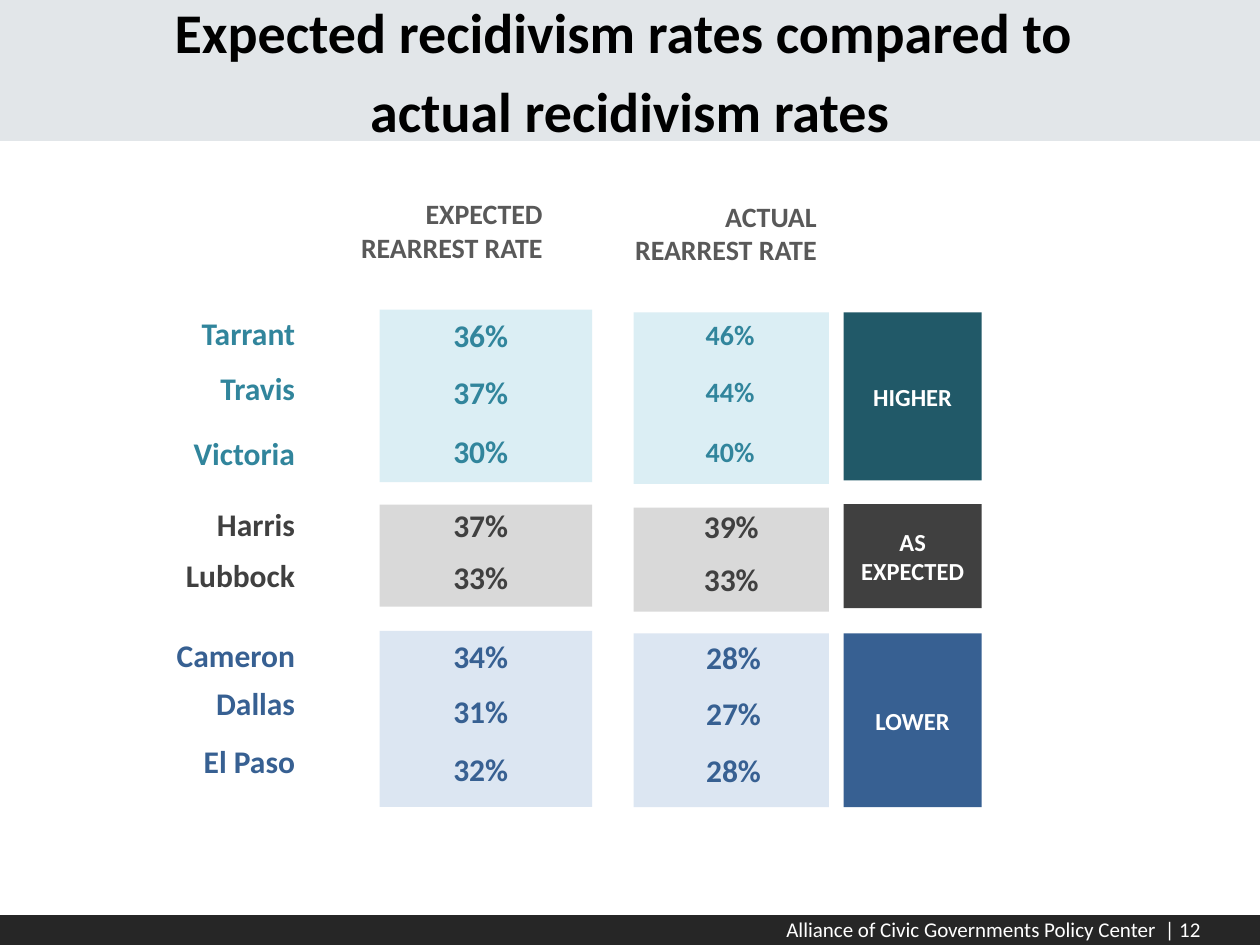
from pptx import Presentation
from pptx.dml.color import RGBColor as Rgb
from pptx.enum.shapes import MSO_SHAPE as Kind
from pptx.enum.text import MSO_ANCHOR as Anchor, PP_ALIGN as Align
from pptx.util import Pt

HEX = {
    "bar": "262626", "band": "E2E6E9", "black": "000000", "white": "FFFFFF",
    "head": "595959",
    "teal": "31859C", "teal pale": "DBEEF4", "teal deep": "215968",
    "gray": "404040", "gray pale": "D9D9D9", "gray deep": "404040",
    "blue": "376092", "blue pale": "DCE6F2", "blue deep": "376092",
}


class Deck:
    font = "Calibri"

    def __init__(self, wide, high):
        self.show = Presentation()
        self.show.slide_width, self.show.slide_height = Pt(wide), Pt(high)
        self.slide = self.show.slides.add_slide(self.show.slide_layouts[6])

    def fill_text(self, shape, lines, size, color, align, anchor, bold=True, gap=0):
        frame = shape.text_frame
        frame.word_wrap = True
        frame.vertical_anchor = anchor
        look = {"name": self.font, "size": Pt(size), "bold": bold}
        for i, line in enumerate(lines):
            para = frame.paragraphs[0] if i == 0 else frame.add_paragraph()
            para.alignment = align
            para.space_before = Pt(gap)
            run = para.add_run()
            run.text = line
            for key, value in look.items():
                setattr(run.font, key, value)
            run.font.color.rgb = Rgb.from_string(HEX[color])

    def block(self, x, y, w, h, color, lines=()):
        box = self.slide.shapes.add_shape(Kind.RECTANGLE, Pt(x), Pt(y), Pt(w), Pt(h))
        box.shadow.inherit = False
        box.fill.solid()
        box.fill.fore_color.rgb = Rgb.from_string(HEX[color])
        box.line.fill.background()
        if lines:
            self.fill_text(box, lines, 14, "white", Align.CENTER, Anchor.MIDDLE)

    def label(self, x, y, w, h, lines, size, color, align=Align.CENTER,
              anchor=Anchor.TOP, **more):
        box = self.slide.shapes.add_textbox(Pt(x), Pt(y), Pt(w), Pt(h))
        self.fill_text(box, lines, size, color, align, anchor, **more)


# Each group: hue, tag lines, (top, height) of the expected, actual and tag
# blocks, left edge and size of the actual rates, and the rows.
# Each row: county, expected, actual, then the top of each of the three.
GROUPS = [
    ("teal", ["HIGHER"], [(177, 98.5), (178.5, 98), (178.5, 96)], 364.3, 16, [
        ("Tarrant", "36%", "46%", 175.7, 177, 177.8),
        ("Travis", "37%", "44%", 207.5, 209.5, 210.2),
        ("Victoria", "30%", "40%", 244.5, 243.5, 244.8)]),
    ("gray", ["AS", "EXPECTED"], [(288.3, 58.3), (290, 59.5), (288, 59.5)], 365, 18, [
        ("Harris", "37%", "39%", 285, 285.8, 286.3),
        ("Lubbock", "33%", "33%", 313.9, 315.4, 316.2)]),
    ("blue", ["LOWER"], [(360.5, 100.7), (362, 99.2), (362, 99.2)], 366.3, 18, [
        ("Cameron", "34%", "28%", 360, 360.7, 361.3),
        ("Dallas", "31%", "27%", 387.5, 392, 393.3),
        ("El Paso", "32%", "28%", 420.6, 425, 425.6)]),
]

deck = Deck(720, 540)

# Footer
deck.block(0, 523, 720, 17, "bar")
deck.label(381.5, 521.5, 312, 19, ["Alliance of Civic Governments Policy Center  | 12"],
           12, "white", Align.RIGHT, Anchor.MIDDLE, bold=False)

# Title band
deck.block(0, 0, 720, 80.5, "band")
deck.label(0, 0, 720, 80.5,
           ["Expected recidivism rates compared to ", "actual recidivism rates"],
           32, "black", anchor=Anchor.MIDDLE, gap=6.4)

# Column heads
for x, y, word in [(160.7, 108.8, "EXPECTED"), (317.3, 110.3, "ACTUAL")]:
    deck.label(x, y, 156.5, 46, [word, "REARREST RATE"], 16, "head", Align.RIGHT)

# County groups
for hue, tag, spans, left, size, rows in GROUPS:
    tones = [hue + " pale", hue + " pale", hue + " deep"]
    places = [(217, 121.5), (362, 111.6), (482, 79)]
    for (x, w), (y, h), tone, lines in zip(places, spans, tones, [(), (), tag]):
        deck.block(x, y, w, h, tone, lines)
    for name, hope, real, top, mid, low in rows:
        deck.label(82.7, top, 93, 29, [name], 18, hue, Align.RIGHT)
        deck.label(217.2, mid, 115, 29, [hope], 18, hue)
        deck.label(left, low, 105.8, 29, [real], size, hue)

deck.show.save("out.pptx")
